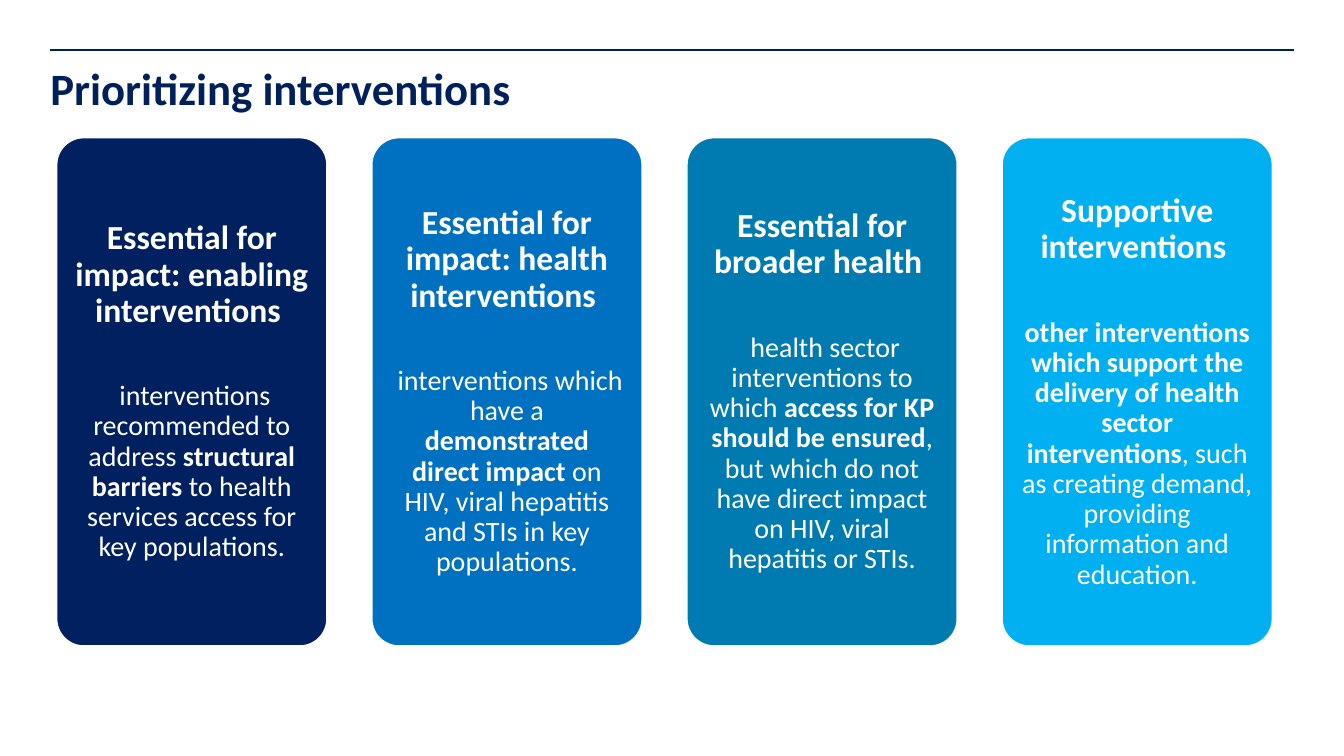
from pptx import Presentation
from pptx.dml.color import RGBColor
from pptx.enum.shapes import MSO_CONNECTOR as Connector, MSO_SHAPE as Shape
from pptx.enum.text import MSO_ANCHOR as Anchor, PP_ALIGN as Align
from pptx.oxml.ns import qn
from pptx.util import Pt
from lxml.etree import SubElement

NAVY, WHITE = "00205C", "FFFFFF"
CARD_LEFT, CARD_TOP, CARD_WIDTH, CARD_HEIGHT = 40.5, 98.4, 193, 363
CARD_PITCH = 225.1

# Fill, heading, then body spans as (text, bold)
CARDS = [
    ("002060", "Essential for impact: enabling interventions ", [
        (" interventions recommended to address ", False),
        ("structural barriers ", True),
        ("to health services access for key populations.", False)]),
    ("0070C0", "Essential for impact: health interventions ", [
        (" interventions which have a ", False),
        ("demonstrated direct impact ", True),
        ("on HIV, viral hepatitis and STIs in key populations.", False)]),
    ("007BB1", "Essential for broader health ", [
        (" health sector interventions to which ", False),
        ("access for KP should be ensured", True),
        (", but which do not have direct impact on HIV, viral hepatitis or STIs.", False)]),
    ("00B0F0", "Supportive interventions ", [
        ("other interventions which support the delivery of health sector interventions", True),
        (", such as creating demand, providing information and education.", False)]),
]


def rgb(value):
    return RGBColor.from_string(value)


def set_margins(frame, margin):
    frame.margin_left = frame.margin_right = Pt(margin)
    frame.margin_top = frame.margin_bottom = Pt(margin)


def add_span(para, text, size, color, bold):
    span = para.add_run()
    span.text = text
    span.font.name = "Calibri"
    span.font.size = Pt(size)
    span.font.bold = bold
    span.font.color.rgb = rgb(color)


def add_rule(page):
    rule = page.shapes.add_connector(Connector.STRAIGHT, Pt(36), Pt(36), Pt(924), Pt(36))
    rule.line.color.rgb = rgb(NAVY)
    rule.line.width = Pt(1.5)
    SubElement(rule._element.spPr, qn("a:effectLst"))


def format_title(page, text):
    title = page.shapes.title
    title.left, title.top, title.width, title.height = Pt(36), Pt(47.8), Pt(888), Pt(79)
    frame = title.text_frame
    frame.word_wrap = True
    frame.vertical_anchor = Anchor.TOP
    set_margins(frame, 0)
    para = frame.paragraphs[0]
    para.alignment = Align.LEFT
    para.line_spacing = 0.9
    add_span(para, text, 32, NAVY, True)


def add_card(page, left, fill, heading, body):
    box = page.shapes.add_shape(Shape.ROUNDED_RECTANGLE, Pt(left), Pt(CARD_TOP),
                                Pt(CARD_WIDTH), Pt(CARD_HEIGHT))
    box.adjustments[0] = 0.1
    box.shadow.inherit = False
    box.fill.solid()
    box.fill.fore_color.rgb = rgb(fill)
    box.line.color.rgb = rgb(WHITE)
    box.line.width = Pt(1)

    frame = box.text_frame
    frame.word_wrap = True
    frame.vertical_anchor = Anchor.MIDDLE
    set_margins(frame, 7)
    heading_para, body_para = frame.paragraphs[0], frame.add_paragraph()
    for para in (heading_para, body_para):
        para.alignment = Align.CENTER
        para.line_spacing = 0.9
    body_para.space_before = Pt(37)
    add_span(heading_para, heading, 24, WHITE, True)
    for text, bold in body:
        add_span(body_para, text, 20, WHITE, bold)


def main():
    deck = Presentation()
    deck.slide_width, deck.slide_height = Pt(960), Pt(540)
    page = deck.slides.add_slide(deck.slide_layouts[5])
    add_rule(page)
    format_title(page, "Prioritizing interventions")
    for index, (fill, heading, body) in enumerate(CARDS):
        add_card(page, CARD_LEFT + index * CARD_PITCH, fill, heading, body)
    deck.save("out.pptx")


if __name__ == "__main__":
    main()
